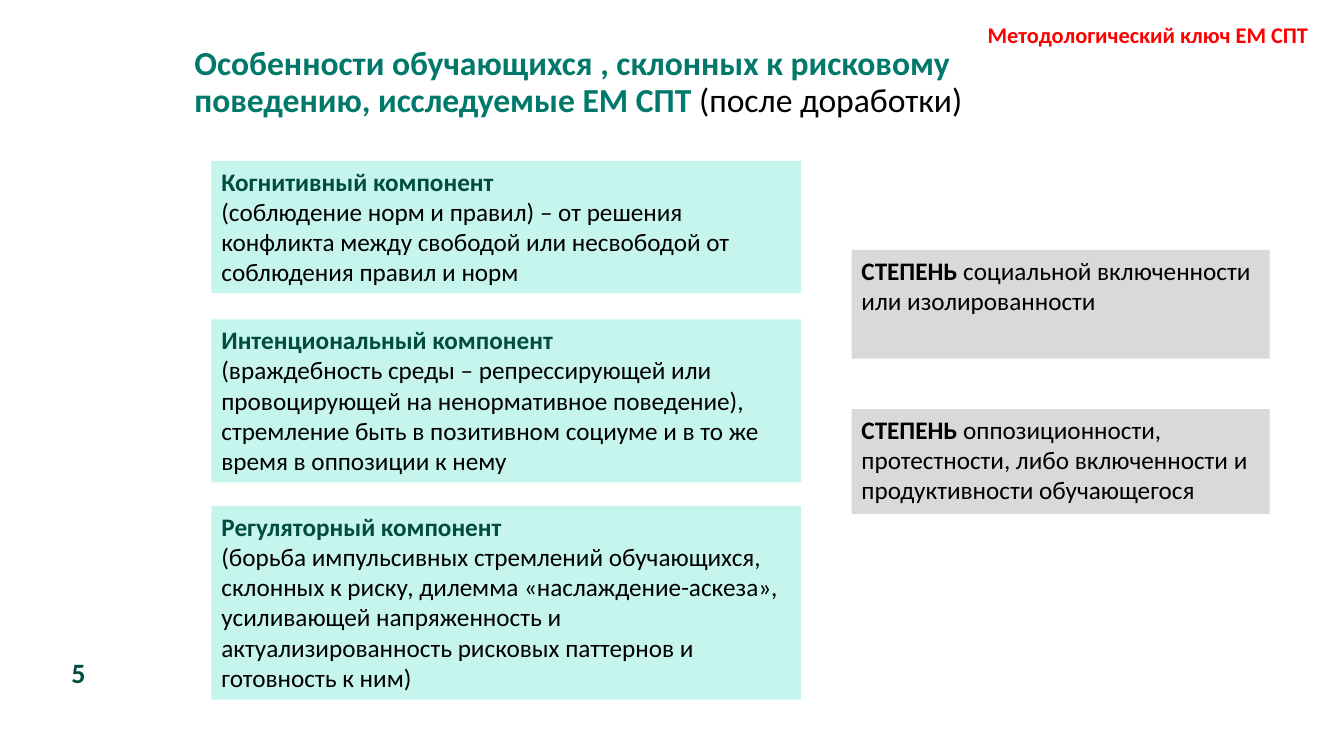
from pptx import Presentation
from pptx.dml.color import RGBColor
from pptx.enum import shapes, text
from pptx.util import Cm, Pt

TEAL = RGBColor(0x00, 0x79, 0x6B)
DARK_TEAL = RGBColor(0x00, 0x4D, 0x40)
MINT = RGBColor(0xC6, 0xF5, 0xED)
GREY = RGBColor(0xD9, 0xD9, 0xD9)
BLACK = RGBColor(0, 0, 0)
RED = RGBColor(0xFF, 0, 0)

# Top, height, heading, description
COMPONENTS = [
    (4.06, 3.33, "Когнитивный компонент",
     "(соблюдение норм и правил) – от решения конфликта между свободой "
     "или несвободой от соблюдения правил и норм"),
    (8.05, 4.11, "Интенциональный компонент",
     "(враждебность среды – репрессирующей или провоцирующей на ненормативное "
     "поведение), стремление быть в позитивном социуме и в то же время "
     "в оппозиции к нему"),
    (12.75, 4.88, "Регуляторный компонент",
     "(борьба импульсивных стремлений обучающихся, склонных к риску, дилемма "
     "«наслаждение-аскеза», усиливающей напряженность и актуализированность "
     "рисковых паттернов и готовность к ним)"),
]

# Top, height, what the degree measures
DEGREES = [
    (6.3, 2.74, " социальной включенности или изолированности"),
    (10.31, 2.64, " оппозиционности, протестности, либо включенности "
                  "и продуктивности обучающегося"),
]


def add_box(left, top, width, height, fill=None):
    """Add a wrapping text box, or a filled rectangle when a fill is given."""
    place = Cm(left), Cm(top), Cm(width), Cm(height)
    if fill is None:
        box = page.shapes.add_textbox(*place)
    else:
        box = page.shapes.add_shape(shapes.MSO_SHAPE.RECTANGLE, *place)
        box.shadow.inherit = False
        box.fill.solid()
        box.fill.fore_color.rgb = fill
        box.line.fill.background()
    box.text_frame.word_wrap = True
    box.text_frame.vertical_anchor = text.MSO_ANCHOR.TOP
    return box.text_frame


def write(para, size, *spans):
    """Fill a paragraph with (wording, colour, bold) spans."""
    para.alignment = text.PP_ALIGN.LEFT
    para.font.name = "Calibri"
    para.font.size = Pt(size)
    for wording, colour, bold in spans:
        span = para.add_run()
        span.text = wording
        span.font.color.rgb = colour
        span.font.bold = bold


deck = Presentation()
deck.slide_width = Cm(33.87)
deck.slide_height = Cm(19.05)
page = deck.slides.add_slide(deck.slide_layouts[6])

title = add_box(4.65, 0.89, 22.35, 2.41)
title.vertical_anchor = text.MSO_ANCHOR.MIDDLE
title.paragraphs[0].line_spacing = 0.9
write(title.paragraphs[0], 24,
      ("Особенности обучающихся , склонных к рисковому поведению, "
       "исследуемые ЕМ СПТ ", TEAL, True),
      ("(после доработки)", BLACK, False))

key = add_box(24.64, 0.41, 8.66, 0.94)
key.word_wrap = False
write(key.paragraphs[0], 16, ("Методологический ключ ЕМ СПТ", RED, True))

for top, height, heading, description in COMPONENTS:
    component = add_box(5.33, top, 14.86, height, MINT)
    write(component.paragraphs[0], 18, (heading, DARK_TEAL, True))
    write(component.add_paragraph(), 18, (description, BLACK, False))

for top, height, measure in DEGREES:
    degree = add_box(21.46, top, 10.54, height, GREY)
    write(degree.paragraphs[0], 18,
          ("СТЕПЕНЬ", BLACK, True), (measure, BLACK, False))

number = add_box(1.8, 16.51, 0.97, 0.86)
number.margin_left = number.margin_top = 0
number.margin_right = number.margin_bottom = 0
write(number.paragraphs[0], 20, ("5", DARK_TEAL, True))

deck.save("out.pptx")
